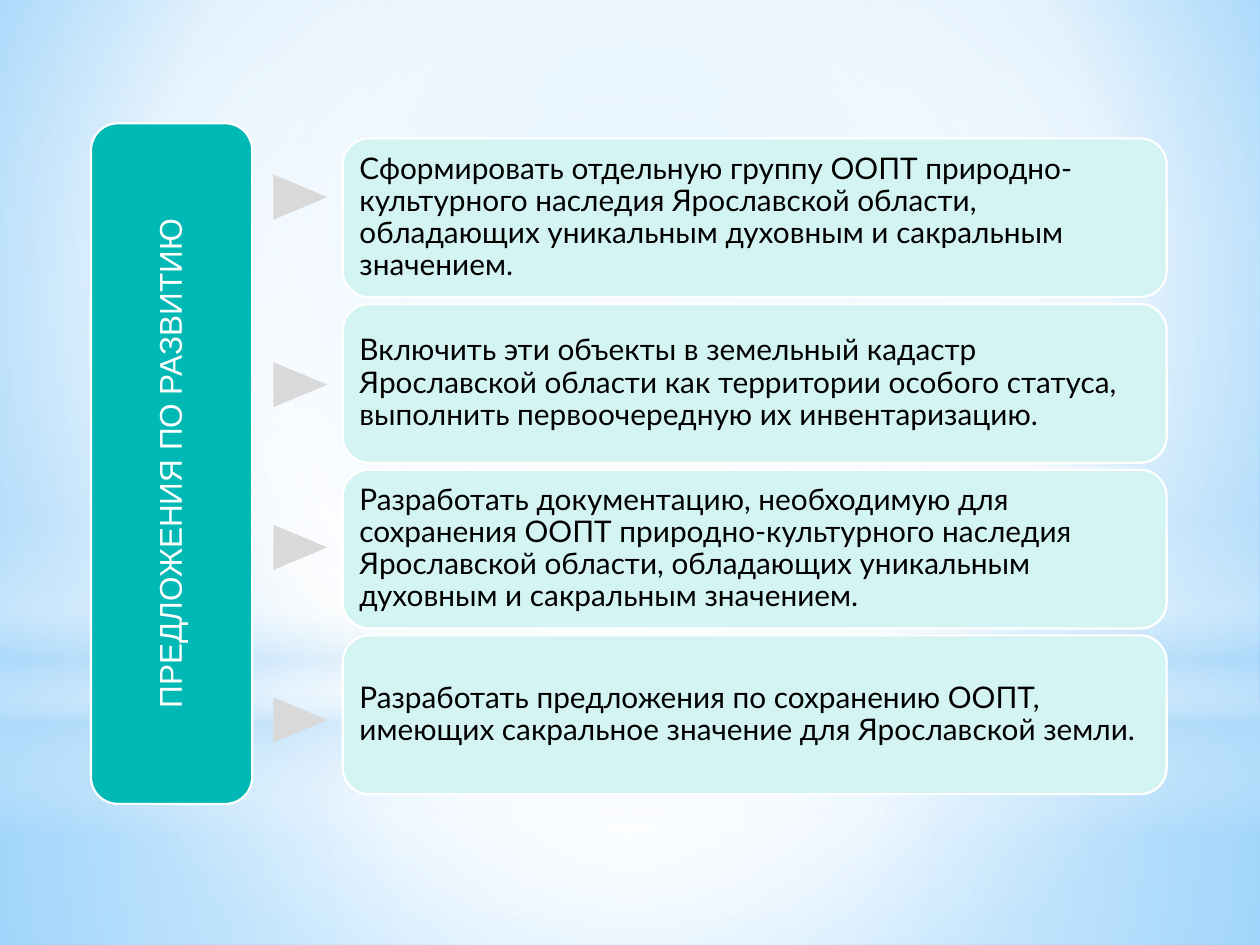
from lxml import etree
from pptx import Presentation
from pptx.dml.color import RGBColor
from pptx.enum import shapes, text
from pptx.oxml import parse_xml
from pptx.util import Cm, Pt

# Content
HEADING = "ПРЕДЛОЖЕНИЯ ПО РАЗВИТИЮ"
PROPOSALS = [
    "Сформировать отдельную группу ООПТ природно-культурного наследия Ярославской области, "
    "обладающих уникальным духовным и сакральным значением.",
    "Включить эти объекты в земельный кадастр Ярославской области как территории особого "
    "статуса, выполнить первоочередную их инвентаризацию.",
    "Разработать документацию, необходимую для сохранения ООПТ природно-культурного наследия "
    "Ярославской области, обладающих уникальным духовным и сакральным значением.",
    "Разработать предложения по сохранению ООПТ, имеющих сакральное значение для "
    "Ярославской земли.",
]
ARROW_TOPS = [3.43, 7.21, 10.49, 13.97]

# Gradient stops: position, colour, opacity (percent)
BACKDROP = [(0, "9ED5FF", 100), (60, "FFFFFF", 100), (100, "5BB9FF", 100)]
FLOOR = [(0, "FFFFFF", 91), (37, "FFFFFF", 76), (100, "B4DCFA", 79)]
SKY = [(0, "FFFFFF", 89), (48, "FFFFFF", 62), (100, "B4DCFA", 79)]
HORIZON = [(0, "FFFFFF", 0), (29, "FFFFFF", 30), (45, "B4DCFA", 40),
           (55, "FFFFFF", 26), (65, "B4DCFA", 60), (100, "FFFFFF", 0)]
GLOW = [(0, "FFFFFF", 100), (56, "FFFFFF", 0)]
CENTRE = (50, 50, 50, 50)

WIDTH, HEIGHT = 25.4, 19.05
SHAPE = shapes.MSO_SHAPE
A = "http://schemas.openxmlformats.org/drawingml/2006/main"


def colour(hex_value):
    return RGBColor.from_string(hex_value)


def gradient(stops, focus=None):
    """Circular gradient around focus (l, t, r, b), or a vertical one."""
    marks = "".join(
        f'<a:gs pos="{pos * 1000}"><a:srgbClr val="{rgb}">'
        f'<a:alpha val="{opacity * 1000}"/></a:srgbClr></a:gs>'
        for pos, rgb, opacity in stops)
    direction = '<a:lin ang="5400000" scaled="0"/>'
    if focus:
        sides = " ".join(f'{side}="{v * 1000}"' for side, v in zip("ltrb", focus))
        direction = f'<a:path path="circle"><a:fillToRect {sides}/></a:path>'
    return parse_xml(f'<a:gradFill xmlns:a="{A}" rotWithShape="1">'
                     f'<a:gsLst>{marks}</a:gsLst>{direction}</a:gradFill>')


def swap_fill(parent, new_fill):
    parent.replace(parent.find(etree.QName(A, "solidFill").text), new_fill)


def add_shape(kind, left, top, width, height, fill="FFFFFF", line=None, rotation=0):
    shape = slide.shapes.add_shape(kind, Cm(left), Cm(top), Cm(width), Cm(height))
    shape.shadow.inherit = False
    shape.rotation = rotation
    shape.fill.solid()
    shape.fill.fore_color.rgb = colour(fill)
    if line:
        shape.line.color.rgb = colour(line)
        shape.line.width = Pt(1.25)
    else:
        shape.line.fill.background()
    return shape


def write(shape, words, font, size, rgb, align):
    frame = shape.text_frame
    frame.word_wrap = True
    frame.vertical_anchor = text.MSO_ANCHOR.MIDDLE
    frame.margin_left = frame.margin_right = Cm(0.18)
    frame.margin_top = frame.margin_bottom = Cm(0.18)
    paragraph = frame.paragraphs[0]
    paragraph.alignment = align
    paragraph.line_spacing = 0.9
    run = paragraph.add_run()
    run.text = words
    run.font.name, run.font.size = font, Pt(size)
    run.font.color.rgb = colour(rgb)


prs = Presentation()
prs.slide_width, prs.slide_height = Cm(WIDTH), Cm(HEIGHT)
slide = prs.slides.add_slide(prs.slide_layouts[6])

# Background
backdrop = slide.background.fill
backdrop.solid()
backdrop.fore_color.rgb = colour("FFFFFF")
swap_fill(slide.element.cSld.bg.bgPr, gradient(BACKDROP, (20, 10, 20, 60)))

for kind, top, height, stops, focus in [
    (SHAPE.RECTANGLE, 14.17, 4.88, FLOOR, CENTRE),
    (SHAPE.RECTANGLE, 0, 14.17, SKY, CENTRE),
    (SHAPE.RECTANGLE, 10.46, 6.35, HORIZON, None),
    (SHAPE.OVAL, 4.45, 14.17, GLOW, CENTRE),
]:
    layer = add_shape(kind, 0, top, WIDTH, height)
    swap_fill(layer.element.spPr, gradient(stops, focus))

# Heading, turned to read upwards
heading = add_shape(SHAPE.ROUNDED_RECTANGLE, -3.4, 7.72, 13.72, 3.25,
                    "00B8B4", "FFFFFF", rotation=270)
write(heading, HEADING, "Arial", 18, "FFFFFF", text.PP_ALIGN.CENTER)

# Proposals
FIRST_TOP, STEP = 2.79, 3.34
for row, proposal in enumerate(PROPOSALS):
    card = add_shape(SHAPE.ROUNDED_RECTANGLE, 6.91, FIRST_TOP + row * STEP, 16.61, 3.2,
                     "D4F4F3", "FFFFFF")
    write(card, proposal, "Lato", 17, "000000", text.PP_ALIGN.LEFT)

# Arrows
for top in ARROW_TOPS:
    add_shape(SHAPE.ISOSCELES_TRIANGLE, 5.6, top, 0.91, 1.09, "D9D9D9", rotation=90)

prs.save("out.pptx")
